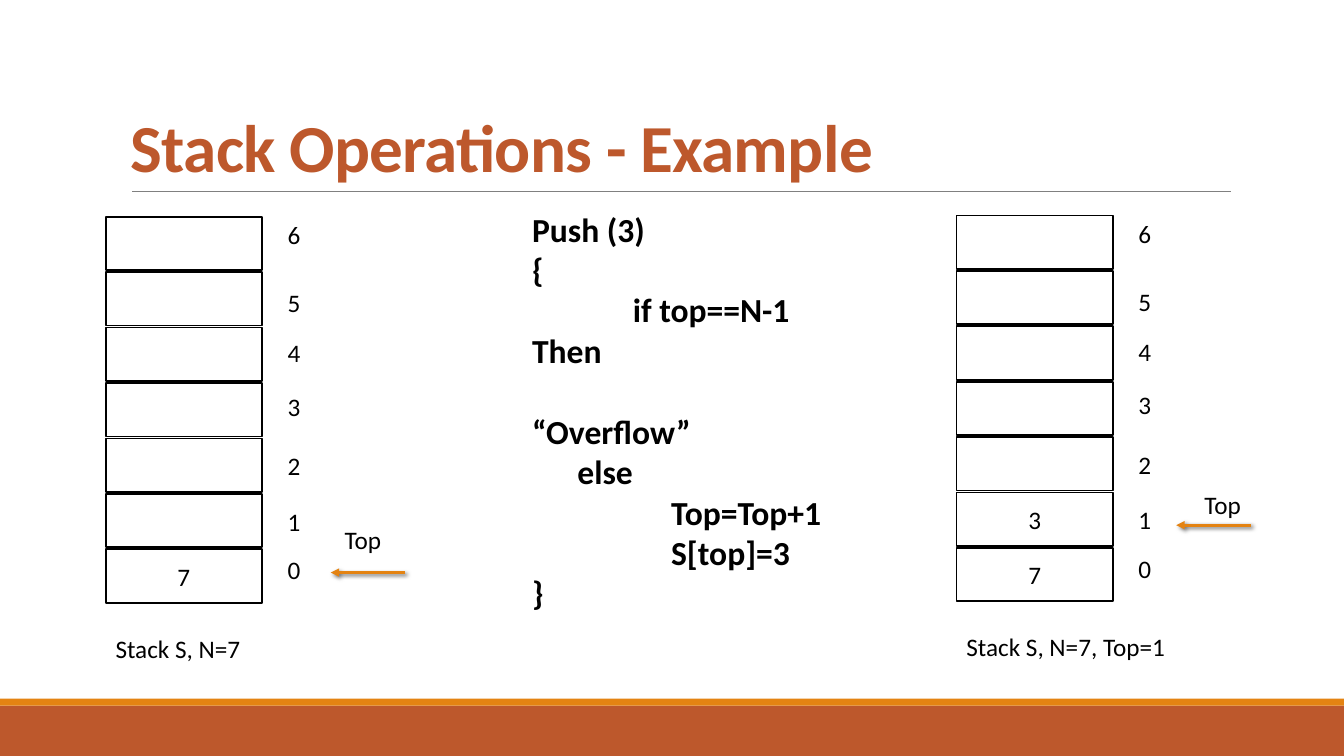
from dataclasses import dataclass

from lxml.etree import SubElement
from pptx import Presentation
from pptx.dml.color import RGBColor
from pptx.enum.shapes import MSO_CONNECTOR as Connector, MSO_SHAPE as Shape
from pptx.enum.text import MSO_ANCHOR as Anchor, PP_ALIGN as Align
from pptx.oxml import parse_xml
from pptx.oxml.ns import nsdecls, qn
from pptx.util import Inches, Pt


@dataclass(frozen=True)
class Theme:
    font: str = "Calibri"
    ink: str = "000000"
    paper: str = "FFFFFF"
    rust: str = "BD582C"
    orange: str = "E48312"
    grey: str = "808080"
    title_size: int = 48
    code_size: int = 24
    label_size: int = 18


THEME = Theme()
WIDTH, HEIGHT = Inches(13.333), Inches(7.5)

# Stack geometry, in percent of the slide's width and height
CELL_W, CELL_H, CELL_PITCH = 11.63, 7.07, 7.33
INDEX_X, CAPTION_Y, LABEL_H = 12.8, 54.4, 5.33
INDEX_TOPS = [-0.27, 8.67, 15.33, 22.4, 30.27, 37.6, 44]  # 6 down to 0
ARROW_W = 5.55

# Code lines: text, first-line indent in inches, space before in points
PUSH_CODE = [
    ("Push (3)", 0, 0),
    ("{", 0, 0),
    ("if top==N-1 Then", 1, 0),
    ("“Overflow”", 0, 29.3),
    ("else", 0.45, 0),
    ("Top=Top+1", 1.38, 0),
    ("S[top]=3", 1.38, 0),
    ("}", 0, 0),
]


def across(share):
    return round(WIDTH * share / 100)


def down(share):
    return round(HEIGHT * share / 100)


def area(x, y, w, h):
    return across(x), down(y), across(w), down(h)


def write(paragraph, text, size=THEME.label_size, color=THEME.ink, bold=False,
          align=Align.LEFT, indent=0, before=0, leading=1.0, tracking=0):
    paragraph.alignment = align
    paragraph.space_before = Pt(before)
    paragraph.line_spacing = leading
    if indent:
        paragraph._p.get_or_add_pPr().set("indent", str(Inches(indent)))
    run = paragraph.add_run()
    run.text = text
    run.font.name = THEME.font
    run.font.size = Pt(size)
    run.font.bold = bold
    run.font.color.rgb = RGBColor.from_string(color)
    if tracking:
        run._r.get_or_add_rPr().set("spc", str(round(tracking * 100)))


def add_frame(slide, place, wrap=True, anchor=Anchor.TOP):
    frame = slide.shapes.add_textbox(*place).text_frame
    frame.word_wrap = wrap
    frame.vertical_anchor = anchor
    return frame


def add_label(slide, text, place, wrap=False):
    write(add_frame(slide, place, wrap).paragraphs[0], text)


def add_box(slide, place, fill, outline=None, text=""):
    box = slide.shapes.add_shape(Shape.RECTANGLE, *place)
    box.shadow.inherit = False
    box.fill.solid()
    box.fill.fore_color.rgb = RGBColor.from_string(fill)
    if outline:
        box.line.color.rgb = RGBColor.from_string(outline)
        box.line.width = Pt(1.25)
    else:
        box.line.fill.background()
    if text:
        box.text_frame.vertical_anchor = Anchor.MIDDLE
        write(box.text_frame.paragraphs[0], text, align=Align.CENTER)


def add_line(slide, start_x, end_x, y, color, weight, arrow=False):
    line = slide.shapes.add_connector(
        Connector.STRAIGHT, across(start_x), down(y), across(end_x), down(y))
    line.line.color.rgb = RGBColor.from_string(color)
    line.line.width = Pt(weight)
    properties = line._element.spPr
    if not arrow:
        SubElement(properties, qn("a:effectLst"))
        return
    SubElement(line.line._get_or_add_ln(), qn("a:tailEnd"), type="triangle")
    properties.append(parse_xml(
        f'<a:effectLst {nsdecls("a")}>'
        f'<a:outerShdw blurRad="{Pt(3)}" dist="{Pt(2)}" dir="2700000" rotWithShape="0">'
        f'<a:srgbClr val="{THEME.ink}"><a:alpha val="60000"/></a:srgbClr>'
        '</a:outerShdw></a:effectLst>'))


def add_stack(slide, left, top, values, caption, arrow, pointer):
    """Values run from index 0 upwards; arrow and pointer are offsets."""
    last = len(INDEX_TOPS) - 1
    for row, index_top in enumerate(INDEX_TOPS):
        index = last - row
        value = values[index] if index < len(values) else ""
        add_box(slide, area(left, top + row * CELL_PITCH, CELL_W, CELL_H),
                THEME.paper, THEME.ink, value)
        add_label(slide, str(index),
                  area(left + INDEX_X, top + index_top, 2.55, LABEL_H))
    add_label(slide, caption,
              area(left, top + CAPTION_Y, 18.53, LABEL_H), wrap=True)
    # Top pointer
    arrow_x, arrow_y = left + arrow[0], top + arrow[1]
    add_line(slide, arrow_x + ARROW_W, arrow_x, arrow_y, THEME.orange, 2, arrow=True)
    add_label(slide, "Top",
              area(left + pointer[0], top + pointer[1], 4.88, LABEL_H))


def add_code(slide, lines, place):
    frame = add_frame(slide, place)
    for number, (text, indent, before) in enumerate(lines):
        paragraph = frame.add_paragraph() if number else frame.paragraphs[0]
        write(paragraph, text, size=THEME.code_size, bold=True,
              indent=indent, before=before)


def main():
    deck = Presentation()
    deck.slide_width, deck.slide_height = WIDTH, HEIGHT
    slide = deck.slides.add_slide(deck.slide_layouts[6])

    # Footer bands and title rule
    add_box(slide, area(0, 93.33, 100, 6.67), THEME.rust)
    add_box(slide, area(0, 92.4, 100, 0.93), THEME.orange)
    add_line(slide, 9.83, 91.58, 25.33, THEME.grey, 0.5)

    # Title
    title = add_frame(slide, area(9, 4.13, 82.5, 21.2), anchor=Anchor.BOTTOM)
    write(title.paragraphs[0], "Stack Operations - Example",
          size=THEME.title_size, color=THEME.rust, bold=True,
          leading=0.85, tracking=-0.5)

    # Push operation between the stack before and after it
    add_code(slide, PUSH_CODE, area(38.85, 26.93, 25.2, 44.4))
    add_stack(slide, 7.86, 28.67, ["7"], "Stack S, N=7",
              arrow=(16.75, 47.07), pointer=(17.05, 40))
    add_stack(slide, 71.17, 28.5, ["7", "3"], "Stack S, N=7, Top=1",
              arrow=(16.35, 40.97), pointer=(17.7, 35.63))

    deck.save("out.pptx")


if __name__ == "__main__":
    main()
